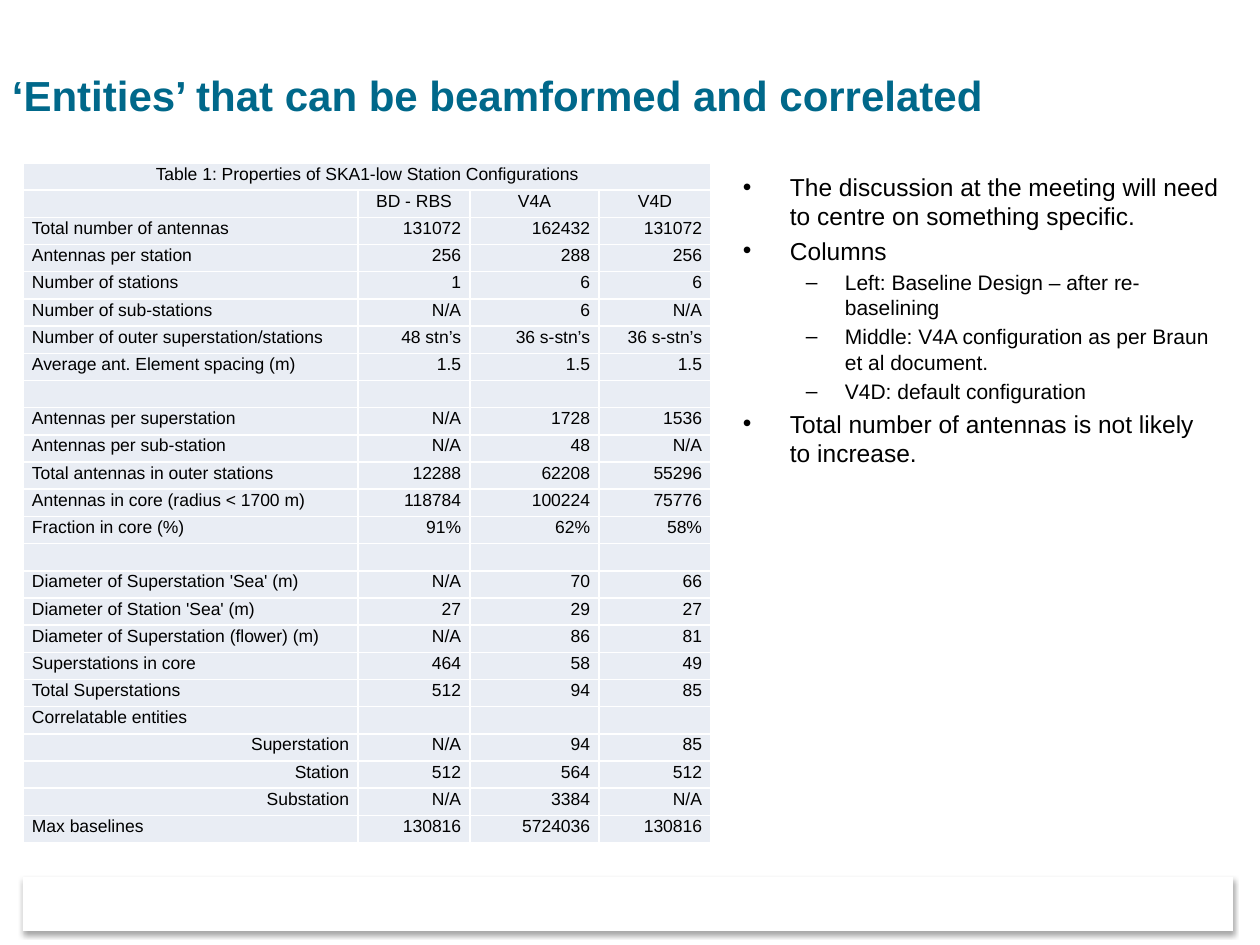
import pptx
import pptx.util
import pptx.dml.color
import pptx.enum.shapes
import pptx.enum.text
import pptx.oxml
import pptx.oxml.ns

SCALE = 914400 / 126
FONT = "Arial"
HUES = {"title": "00688A", "text": "000000", "cell": "E9EDF4", "white": "FFFFFF"}
ALIGN = pptx.enum.text.PP_ALIGN
NS = pptx.oxml.ns.nsdecls("a")

HEAD = "Table 1: Properties of SKA1-low Station Configurations"
ROWS = [
    ("", "BD - RBS", "V4A", "V4D"),
    ("Total number of antennas", "131072", "162432", "131072"),
    ("Antennas per station", "256", "288", "256"),
    ("Number of stations", "1", "6", "6"),
    ("Number of sub-stations", "N/A", "6", "N/A"),
    ("Number of outer superstation/stations", "48 stn’s", "36 s-stn’s", "36 s-stn’s"),
    ("Average ant. Element spacing (m)", "1.5", "1.5", "1.5"),
    ("", "", "", ""),
    ("Antennas per superstation", "N/A", "1728", "1536"),
    ("Antennas per sub-station", "N/A", "48", "N/A"),
    ("Total antennas in outer stations", "12288", "62208", "55296"),
    ("Antennas in core (radius < 1700 m)", "118784", "100224", "75776"),
    ("Fraction in core (%)", "91%", "62%", "58%"),
    ("", "", "", ""),
    ("Diameter of Superstation 'Sea' (m)", "N/A", "70", "66"),
    ("Diameter of Station 'Sea' (m)", "27", "29", "27"),
    ("Diameter of Superstation (flower) (m)", "N/A", "86", "81"),
    ("Superstations in core", "464", "58", "49"),
    ("Total Superstations", "512", "94", "85"),
    ("Correlatable entities", "", "", ""),
    ("Superstation", "N/A", "94", "85"),
    ("Station", "512", "564", "512"),
    ("Substation", "N/A", "3384", "N/A"),
    ("Max baselines", "130816", "5724036", "130816"),
]
KINDS = ("Superstation", "Station", "Substation")  # right-aligned row labels
COLS = (335, 112, 129, 112)

NOTES = [
    (0, "The discussion at the meeting will need to centre on something specific."),
    (0, "Columns"),
    (1, "Left: Baseline Design – after re-baselining"),
    (1, "Middle: V4A configuration as per Braun et al document."),
    (1, "V4D: default configuration"),
    (0, "Total number of antennas is not likely to increase."),
]
# Per level: bullet, text size in points, left margin and hang in px
LEVELS = [("•", 14, 47, 47), ("–", 12, 102, 39)]


def px(num):
    return pptx.util.Emu(round(num * SCALE))


def hue(name):
    return pptx.dml.color.RGBColor.from_string(HUES[name])


def add_run(para, text, size, color="text", bold=False):
    run = para.add_run()
    run.text = text
    run.font.name = FONT
    run.font.size = pptx.util.Pt(size)
    run.font.bold = bold
    run.font.color.rgb = hue(color)


def add_box(slide, box):
    frame = slide.shapes.add_textbox(*map(px, box)).text_frame
    frame.word_wrap = True
    frame.margin_left = frame.margin_right = px(12)
    frame.margin_top = px(9)
    return frame


def add_bar(slide, box):
    """White footer bar with a soft shadow below it."""
    bar = slide.shapes.add_shape(
        pptx.enum.shapes.MSO_SHAPE.RECTANGLE, *map(px, box))
    bar.shadow.inherit = False
    bar.fill.solid()
    bar.fill.fore_color.rgb = hue("white")
    bar.line.fill.background()
    glow = pptx.oxml.parse_xml(
        f'<a:outerShdw {NS} blurRad="39370" dist="22860" dir="5400000" rotWithShape="0">'
        f'<a:srgbClr val="{HUES["text"]}"><a:alpha val="35000"/></a:srgbClr></a:outerShdw>')
    bar.element.spPr.find(pptx.oxml.ns.qn("a:effectLst")).append(glow)


def add_title(slide, box):
    para = add_box(slide, box).paragraphs[0]
    add_run(para, "‘Entities’ that can be beamformed and correlated", 24, "title", True)


def add_notes(slide, box):
    """Bulleted remarks on two levels."""
    frame = add_box(slide, box)
    for num, (level, text) in enumerate(NOTES):
        mark, size, left, hang = LEVELS[level]
        para = frame.add_paragraph() if num else frame.paragraphs[0]
        para.level = level
        if num:
            para.space_before = pptx.util.Pt(size * 0.2)
        props = para._p.get_or_add_pPr()
        props.set("marL", str(px(left)))
        props.set("indent", str(-px(hang)))
        props.append(pptx.oxml.parse_xml(f'<a:buFont {NS} typeface="{FONT}"/>'))
        props.append(pptx.oxml.parse_xml(f'<a:buChar {NS} char="{mark}"/>'))
        add_run(para, text, size)


def set_cell(cell, text, align):
    cell.margin_left = cell.margin_right = px(9)
    cell.margin_top = cell.margin_bottom = 0
    para = cell.text_frame.paragraphs[0]
    para.alignment = align
    para.line_spacing = 1.07
    if text:
        add_run(para, text, 10)
    else:
        # Keep empty cells as low as the others
        para._p.append(pptx.oxml.parse_xml(f'<a:endParaRPr {NS} sz="1000"/>'))
    # Borders come before the fill
    props = cell._tc.get_or_add_tcPr()
    for side in "LRTB":
        props.append(pptx.oxml.parse_xml(
            f'<a:ln{side} {NS} w="12700"><a:solidFill>'
            f'<a:srgbClr val="{HUES["white"]}"/></a:solidFill></a:ln{side}>'))
    cell.fill.solid()
    cell.fill.fore_color.rgb = hue("cell")


def add_grid(slide, box):
    """Station table with a heading merged over all columns."""
    lines = [(HEAD, "", "", "")] + ROWS
    grid = slide.shapes.add_table(len(lines), len(COLS), *map(px, box)).table
    grid.first_row = grid.horz_banding = False
    for col, wide in zip(grid.columns, COLS):
        col.width = px(wide)
    for row in grid.rows:
        row.height = px(box[3] / len(lines))
    for r, line in enumerate(lines):
        for c, text in enumerate(line):
            if r < 2:
                align = ALIGN.CENTER
            elif c or text in KINDS:
                align = ALIGN.RIGHT
            else:
                align = ALIGN.LEFT
            set_cell(grid.cell(r, c), text, align)
    grid.cell(0, 0).merge(grid.cell(0, len(COLS) - 1))


def main():
    deck = pptx.Presentation()
    deck.slide_width, deck.slide_height = px(1260), px(945)
    slide = deck.slides.add_slide(deck.slide_layouts[6])
    add_bar(slide, (23, 877, 1210, 54))
    add_title(slide, (0, 61, 1124, 86))
    add_notes(slide, (731, 163, 501, 328))
    add_grid(slide, (23, 163, sum(COLS), 680))
    deck.save("out.pptx")


if __name__ == "__main__":
    main()
